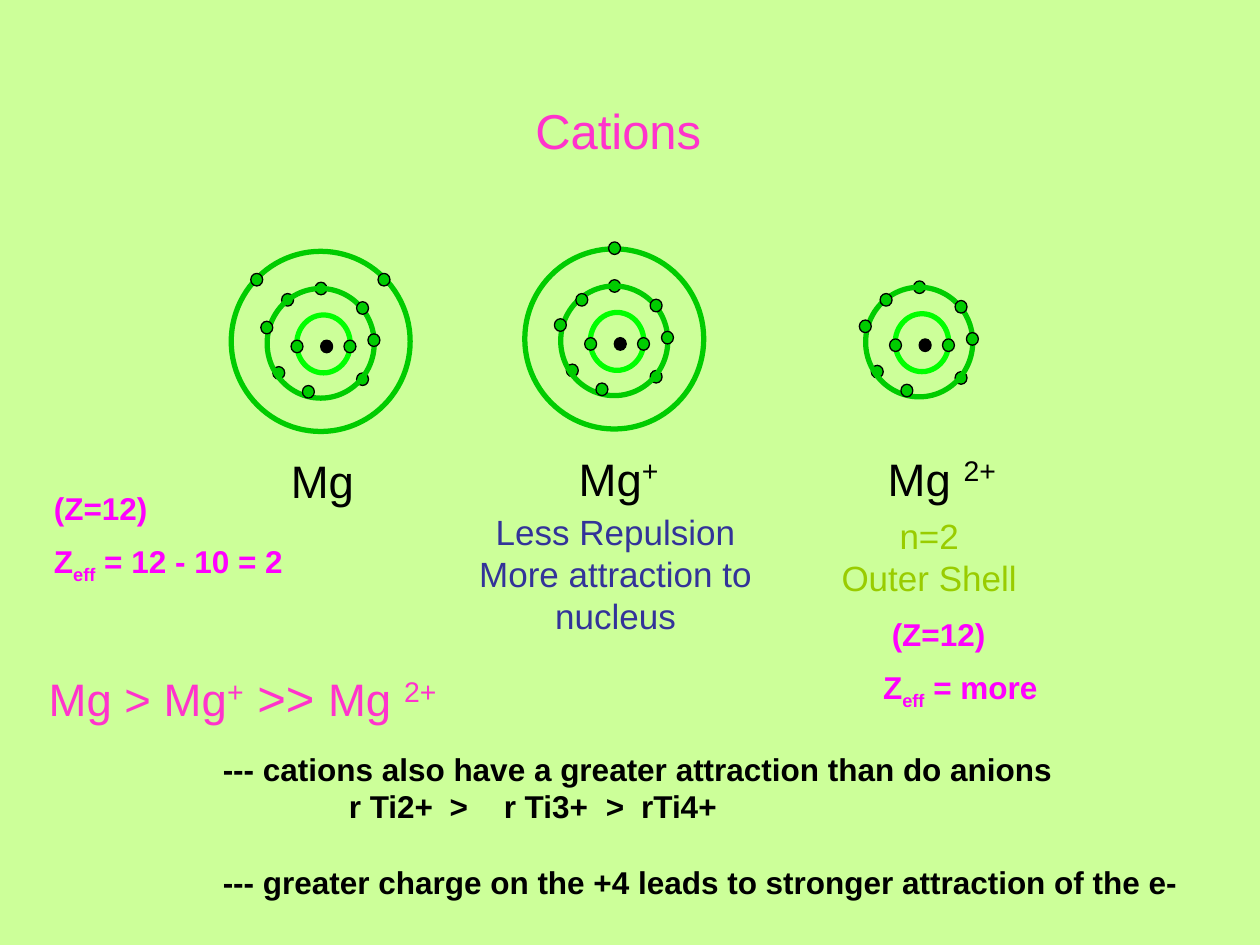
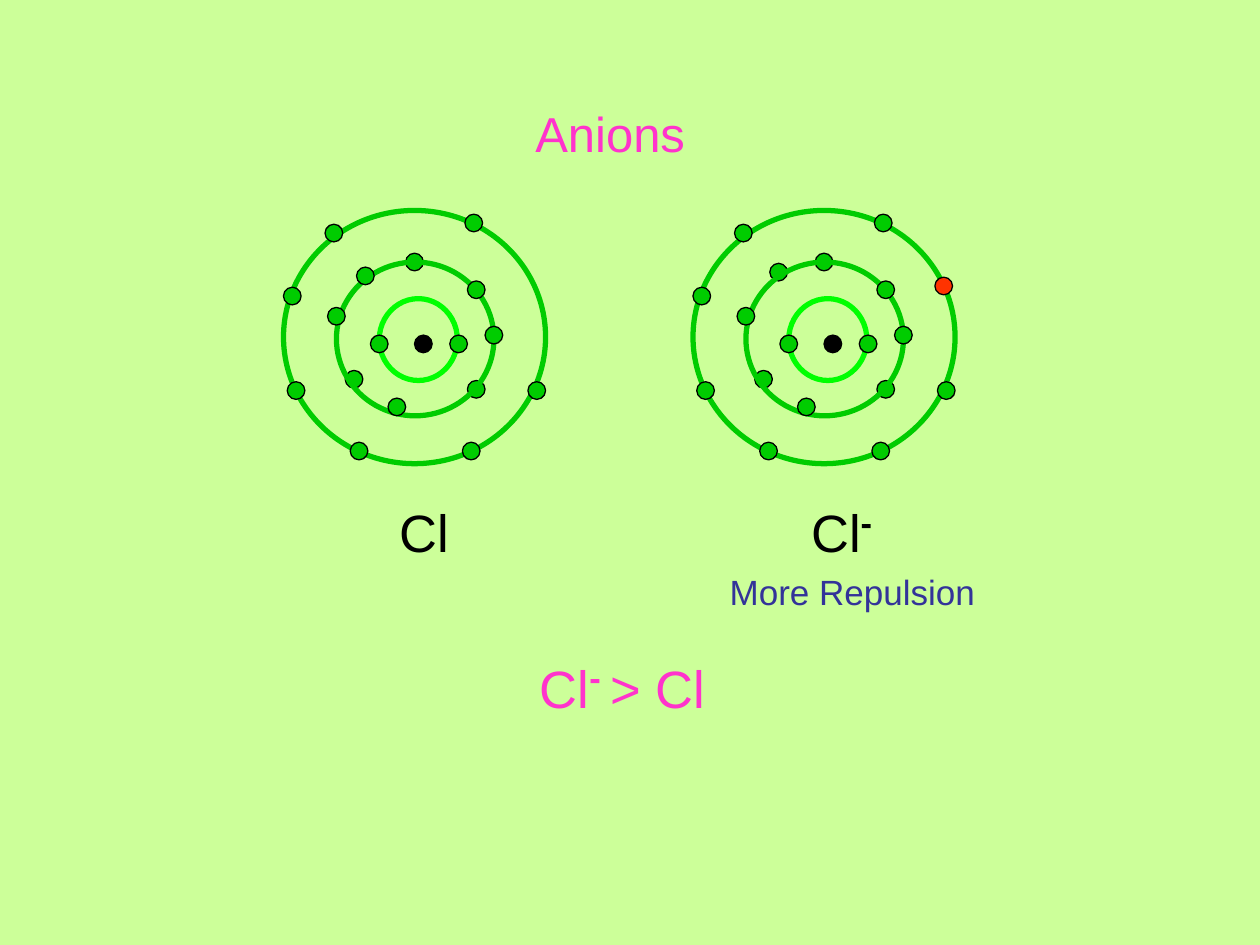
"""Build two slides comparing the sizes of cations and anions."""
from dataclasses import dataclass

from lxml import etree
from pptx import Presentation
from pptx import util as u
from pptx.dml.color import RGBColor
from pptx.enum import shapes, text
from pptx.oxml import ns

BACKGROUND = RGBColor(0xCC, 0xFF, 0x99)
PINK = RGBColor(0xFF, 0x33, 0xCC)
MAGENTA = RGBColor(0xFF, 0x00, 0xFF)
INDIGO = RGBColor(0x33, 0x33, 0x99)
OLIVE = RGBColor(0x99, 0xCC, 0x00)
GREEN = RGBColor(0x00, 0xCC, 0x00)
LIME = RGBColor(0x00, 0xFF, 0x00)
RED = RGBColor(0xFF, 0x33, 0x00)
BLACK = RGBColor(0x00, 0x00, 0x00)

COLUMNS, ROWS = 100, 75
FONT = "Arial"
SUPERSCRIPT, SUBSCRIPT = 30, -25
CENTER = text.PP_ALIGN.CENTER


@dataclass
class Atom:
    """Shell sizes and electron places, measured from the middle shell's corner."""
    electron: tuple
    lower: list
    nucleus: tuple
    inner_shell: tuple
    inner: list
    middle_shell: tuple
    middle: list
    outer_shell: tuple


MAGNESIUM = Atom(
    electron=(0.95, 1), lower=[(0.45, 6.2), (3.8, -0.5), (7.1, 6.7)],
    nucleus=(4.25, 4.1), inner_shell=(2.35, 2.1, 4.25, 4.6),
    inner=[(1.9, 4.1), (6.1, 4.1)], middle_shell=(0, 0, 8.5, 8.7),
    middle=[(8, 3.6), (7.1, 1.05), (-0.5, 2.6), (2.8, 7.7)],
    outer_shell=(-2.85, -2.95, 14.2, 14.3))

CHLORINE = Atom(
    electron=(1.4, 1.4), lower=[(0.7, 8.6), (5.5, -0.7), (10.4, 9.4)],
    nucleus=(6.2, 5.8), inner_shell=(3.4, 2.9, 6.2, 6.5),
    inner=[(2.7, 5.8), (9, 5.8)], middle_shell=(0, 0, 12.5, 12.2),
    middle=[(11.8, 5.1), (10.4, 1.5), (-0.7, 3.6), (4.1, 10.8)],
    outer_shell=(-4.2, -4.1, 20.8, 20.1))
CHLORINE_VALENCE = [(-0.9, -3), (1.1, 14.3), (-4.2, 2), (-3.9, 9.5),
                    (15.2, 9.5), (10.2, -3.8), (10, 14.3)]


class Board:
    """Hold the shared style and the slide being drawn."""

    def __init__(self):
        self.presentation = Presentation()
        self.presentation.slide_width = u.Inches(10)
        self.presentation.slide_height = u.Inches(7.5)
        self.column = self.presentation.slide_width / COLUMNS
        self.row = self.presentation.slide_height / ROWS
        self.slide = None

    def box(self, left, top, width, height):
        """Turn grid units into slide lengths."""
        return (round(left * self.column), round(top * self.row),
                round(width * self.column), round(height * self.row))

    def new_slide(self, title, place):
        """Start a slide with the shared background and title style."""
        self.slide = self.presentation.slides.add_slide(self.presentation.slide_layouts[6])
        fill = self.slide.background.fill
        fill.solid()
        fill.fore_color.rgb = BACKGROUND
        self.label(place, [[(title, 28)]], PINK, align=None)

    def label(self, place, lines, color, align=CENTER, wrap=False, bold=False,
              anchor=text.MSO_ANCHOR.MIDDLE, gaps=None):
        """Write lines of runs, each run being (text, size, baseline, bold)."""
        frame = self.slide.shapes.add_textbox(*self.box(*place)).text_frame
        frame.word_wrap = wrap
        frame.vertical_anchor = anchor
        for index, runs in enumerate(lines):
            paragraph = frame.paragraphs[0] if index == 0 else frame.add_paragraph()
            paragraph.alignment = align
            if gaps and gaps[index]:
                paragraph.space_before = u.Pt(gaps[index])
            for words, size, *extra in runs:
                baseline, heavy = extra + [0, bold][len(extra):]
                run = paragraph.add_run()
                run.text = words
                run.font.name = FONT
                run.font.size = u.Pt(size)
                run.font.bold = heavy
                run.font.color.rgb = color
                if baseline:
                    run._r.get_or_add_rPr().set("baseline", str(baseline * 1000))
        return frame

    def remark_block(self, place, lines, color, gaps):
        """Write bold wrapped lines from the top of the box."""
        return self.label(place, lines, color, align=None, wrap=True, bold=True,
                          anchor=text.MSO_ANCHOR.TOP, gaps=gaps)

    def tab_stops(self, paragraph, stops):
        """Set tab stops, given in columns from the text edge."""
        tabs = etree.SubElement(paragraph._p.get_or_add_pPr(), ns.qn("a:tabLst"))
        for stop in stops:
            etree.SubElement(tabs, ns.qn("a:tab"), pos=str(round(stop * self.column)), algn="l")

    def ellipse(self, place, line, weight, fill=None):
        """Draw an ellipse, hollow unless a fill is given."""
        shape = self.slide.shapes.add_shape(shapes.MSO_SHAPE.OVAL, *self.box(*place))
        shape.shadow.inherit = False
        shape.line.color.rgb = line
        shape.line.width = u.Pt(weight)
        if fill is None:
            shape.fill.background()
        else:
            shape.fill.solid()
            shape.fill.fore_color.rgb = fill

    def atom(self, atom, left, top, buried=(), valence=(), added=(), outer=True):
        """Draw the shells and electrons of an atom from back to front."""
        def shell(place, color):
            x, y, width, height = place
            self.ellipse((left + x, top + y, width, height), color, 3)

        def electrons(places, fill=GREEN):
            for x, y in places:
                self.ellipse((left + x, top + y, *atom.electron), BLACK, 0.75, fill)

        electrons([*buried, *atom.lower])
        electrons([atom.nucleus], BLACK)
        shell(atom.inner_shell, LIME)
        electrons(atom.inner)
        shell(atom.middle_shell, GREEN)
        electrons(atom.middle)
        if outer:
            shell(atom.outer_shell, GREEN)
        electrons(valence)
        electrons(added, RED)


def draw_cations(board):
    """Draw magnesium and its two cations."""
    board.new_slide("Cations", (41.5, 7.5, 15.2, 5.7))
    board.label((2.5, 52.5, 34.5, 5.7),
                [[("Mg > Mg", 26), ("+", 28, SUPERSCRIPT), (" >> ", 28), ("Mg ", 26),
                  ("2+", 28, SUPERSCRIPT), (" ", 26)]], PINK)

    board.atom(MAGNESIUM, 44.5, 22.7, valence=[(3.8, -3.5), (1.2, 0.6)])
    board.atom(MAGNESIUM, 68.7, 22.8, valence=[(1.15, 0.5)], outer=False)
    board.atom(MAGNESIUM, 21.2, 22.9, buried=[(1.15, 0.4)],
               valence=[(-1.3, -1.2), (8.8, -1.2)])
    board.label((44.8, 35.2, 8.6, 5.3), [[("Mg", 26), ("+", 28, SUPERSCRIPT)]], BLACK)
    board.label((69.2, 35.2, 11.1, 5.3), [[("Mg ", 26), ("2+", 28, SUPERSCRIPT)]], BLACK)
    board.label((22.1, 35.5, 7, 5.3), [[("Mg", 26)]], BLACK)

    board.label((32.4, 41.7, 32.9, 7.7),
                [[("Less Repulsion", 20)], [("More attraction to nucleus", 20)]],
                INDIGO, wrap=True)
    board.label((65.8, 40.3, 15.9, 7.7), [[("n=2", 20)], [("Outer Shell", 20)]], OLIVE)

    charges = [((69.1, 48.3, 30.8, 13), " (Z=12)", " = more"),
               ((3.3, 38.3, 50, 13), "(Z=12)", " = 12 - 10 = 2")]
    for place, number, result in charges:
        board.remark_block(place, [[(number, 18)],
                                   [("Z", 18), ("eff", 18, SUBSCRIPT), (result, 18)]],
                           MAGENTA, gaps=(0, 9))

    remarks = ["--- cations also have a greater attraction than do anions",
               "\tr Ti2+\t>\tr Ti3+\t>\trTi4+",
               "--- greater charge on the +4 leads to stronger attraction of the e-"]
    frame = board.remark_block((16.7, 59, 83.3, 13), [[(remark, 18)] for remark in remarks],
                               BLACK, gaps=(0, 0, 21.7))
    board.tab_stops(frame.paragraphs[1], (10, 18, 22.3, 30.4, 33.2))


def draw_anions(board):
    """Draw chlorine and its anion."""
    board.new_slide("Anions", (41.5, 7.7, 13.9, 5.7))
    board.label((41.5, 51, 15.8, 6.7),
                [[("Cl", 30), ("- ", 34, SUPERSCRIPT, True), ("> Cl", 30)]], PINK)
    board.label((56.9, 44.8, 21.5, 4.3), [[("More Repulsion", 20)]], INDIGO)
    board.label((63.3, 39, 7, 6), [[("Cl", 30), ("-", 34, SUPERSCRIPT, True)]], BLACK)
    board.label((30.7, 39.2, 5.9, 6), [[("Cl", 30)]], BLACK)
    board.atom(CHLORINE, 59.2, 20.8, buried=[(1.9, 0.1)], valence=CHLORINE_VALENCE,
               added=[(15, 1.2)])
    board.atom(CHLORINE, 26.7, 20.8, valence=[*CHLORINE_VALENCE, (1.6, 0.4)])


def main():
    """Draw both slides and save them."""
    board = Board()
    draw_cations(board)
    draw_anions(board)
    board.presentation.save("out.pptx")


if __name__ == "__main__":
    main()
